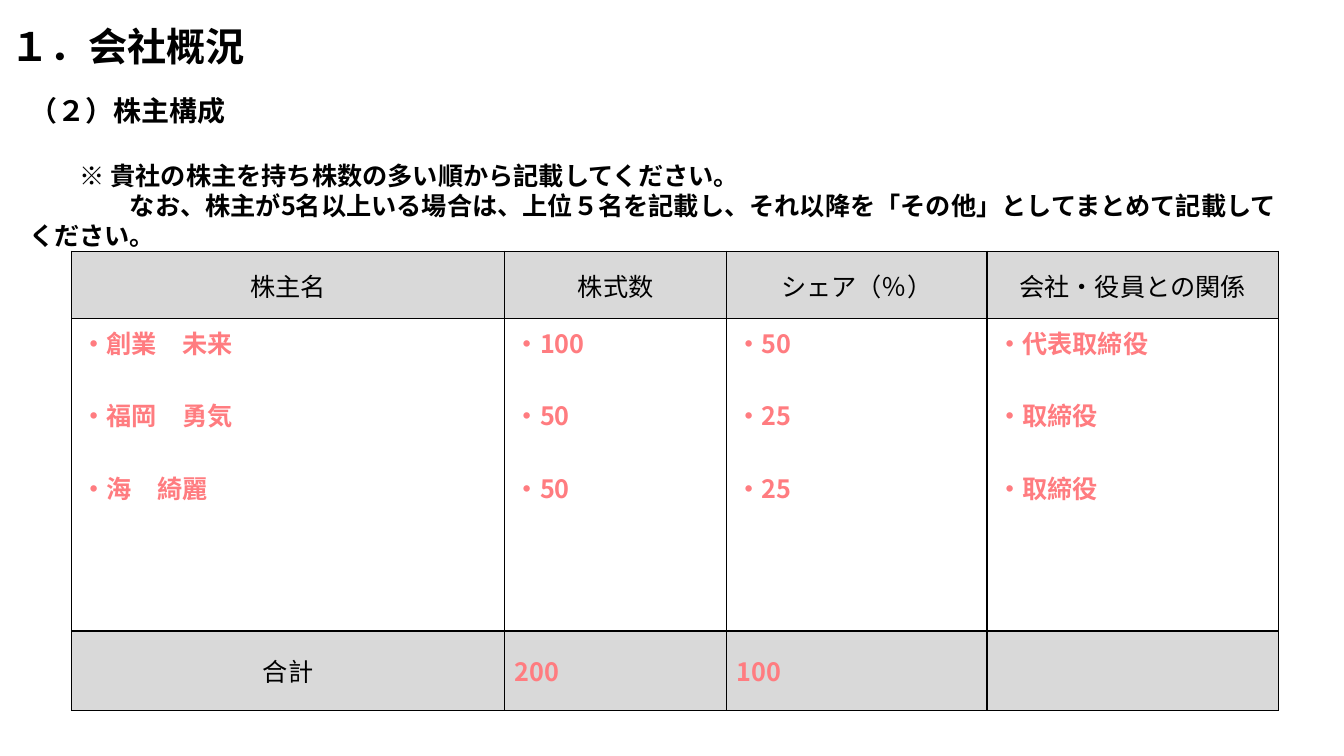
from lxml import etree
from pptx import Presentation
from pptx.dml.color import RGBColor
from pptx.enum.text import MSO_ANCHOR, MSO_AUTO_SIZE, PP_ALIGN
from pptx.oxml.ns import qn
from pptx.util import Pt

LEFT, CENTER = PP_ALIGN.LEFT, PP_ALIGN.CENTER
TOP, MIDDLE = MSO_ANCHOR.TOP, MSO_ANCHOR.MIDDLE
NO_FIT = MSO_AUTO_SIZE.NONE

COLORS = {"ink": "000000", "entry": "FF7C80", "band": "D9D9D9"}
FONT = "Noto Sans CJK JP"


class Sheet:
    def __init__(self, deck):
        self.slide = deck.slides.add_slide(deck.slide_layouts[5])

    def place(self, shape, left, top, width, height):
        shape.left, shape.top = Pt(left), Pt(top)
        shape.width, shape.height = Pt(width), Pt(height)

    def add_run(self, para, text, size=18, color="ink", bold=True, align=LEFT):
        para.alignment = align
        run = para.add_run()
        run.text = text
        font = run.font
        font.name, font.size, font.bold = FONT, Pt(size), bold
        font.color.rgb = RGBColor.from_string(COLORS[color])
        east = etree.SubElement(run._r.get_or_add_rPr(), qn("a:ea"))
        east.set("typeface", FONT)

    def title(self, text, box):
        shape = self.slide.shapes.title
        self.place(shape, *box)
        frame = shape.text_frame
        frame.auto_size = NO_FIT
        frame.vertical_anchor = MIDDLE
        para = frame.paragraphs[0]
        para.line_spacing = 0.9
        self.add_run(para, text, 28)

    def notes(self, lines, box):
        frame = self.slide.shapes.add_textbox(*map(Pt, box)).text_frame
        frame.word_wrap = True
        for i, (text, size, pitch, gap, indent) in enumerate(lines):
            para = frame.add_paragraph() if i else frame.paragraphs[0]
            para.line_spacing, para.space_before = Pt(pitch), Pt(gap)
            para._p.get_or_add_pPr().set("indent", str(Pt(indent)))
            self.add_run(para, text, size)

    def border(self, cell):
        props = cell._tc.get_or_add_tcPr()
        for side in ("lnL", "lnR", "lnT", "lnB"):
            line = etree.SubElement(props, qn("a:" + side), w=str(Pt(1)))
            fill = etree.SubElement(line, qn("a:solidFill"))
            etree.SubElement(fill, qn("a:srgbClr"), val=COLORS["ink"])

    def cell(self, cell, lines, color, align, anchor, band):
        self.border(cell)
        cell.vertical_anchor = anchor
        if band:
            cell.fill.solid()
            cell.fill.fore_color.rgb = RGBColor.from_string(COLORS["band"])
        else:
            cell.fill.background()
        frame = cell.text_frame
        for i, text in enumerate(lines):
            para = frame.add_paragraph() if i else frame.paragraphs[0]
            para.space_before = Pt(26 if i else 0)
            self.add_run(para, text, 18, color, color == "entry", align)

    def table(self, left, top, cols, rows):
        shape = self.slide.shapes.add_table(
            len(rows), len(cols), Pt(left), Pt(top), Pt(sum(cols)), Pt(sum(rows)))
        table = shape.table
        table.first_row = table.horz_banding = False
        for col, width in zip(table.columns, cols):
            col.width = Pt(width)
        for row, height in zip(table.rows, rows):
            row.height = Pt(height)
        return table


def main():
    deck = Presentation()
    deck.slide_width, deck.slide_height = Pt(960), Pt(540)
    sheet = Sheet(deck)

    # Title
    sheet.title("１．会社概況", (0, -0.7, 828, 71.3))

    # Shareholder table: heads, entries, totals
    heads = ["株主名", "株式数", "シェア（％）", "会社・役員との関係"]
    entries = [
        ["・創業　未来", "・福岡　勇気", "・海　綺麗"],
        ["・100", "・50", "・50"],
        ["・50", "・25", "・25"],
        ["・代表取締役", "・取締役", "・取締役"],
    ]
    totals = [["合計"], ["200"], ["100"], []]
    table = sheet.table(51, 179.5, [309.6, 158.4, 186, 208], [48.2, 223, 57])
    for i, head in enumerate(heads):
        sheet.cell(table.cell(0, i), [head], "ink", CENTER, MIDDLE, True)
        sheet.cell(table.cell(1, i), entries[i], "entry", LEFT, TOP, False)
        color, align = ("entry", LEFT) if i else ("ink", CENTER)
        sheet.cell(table.cell(2, i), totals[i], color, align, MIDDLE, True)

    # Section heading and instructions: text, size, pitch, gap, indent
    sheet.notes([
        ("（２）株主構成", 20, 24, 0, 0),
        ("※ 貴社の株主を持ち株数の多い順から記載してください。", 18, 21.4, 24, 36),
        ("なお、株主が5名以上いる場合は、上位５名を記載し、"
         "それ以降を「その他」としてまとめて記載してください。", 18, 21.4, 0, 72),
    ], (13.7, 63.4, 910.8, 121))

    deck.save("out.pptx")


if __name__ == "__main__":
    main()
